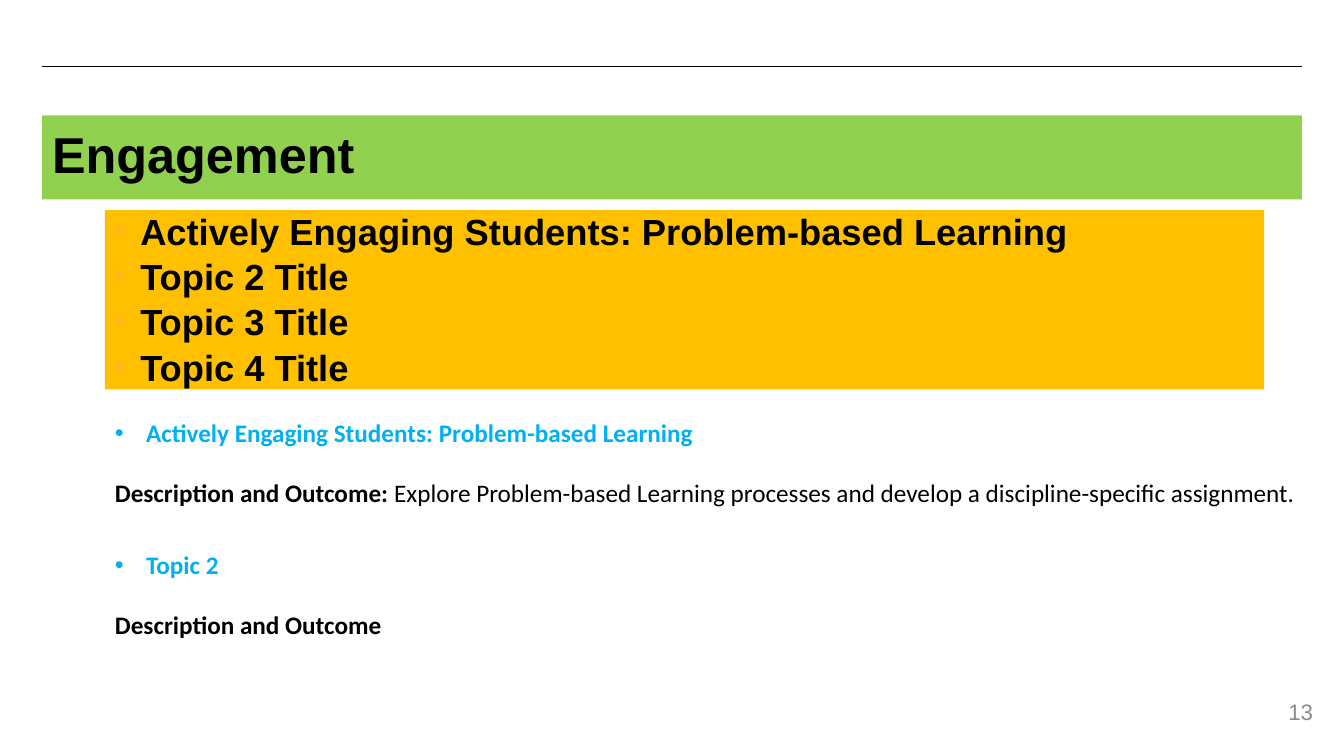
from lxml.etree import SubElement
from pptx import Presentation
from pptx.dml.color import RGBColor
from pptx.enum.shapes import MSO_CONNECTOR as Connector
from pptx.enum.text import MSO_ANCHOR as Anchor, MSO_AUTO_SIZE as AutoSize, PP_ALIGN as Align
from pptx.oxml.ns import qn
from pptx.util import Inches, Pt

COLUMNS, ROWS = 64, 36
BLACK, BLUE, GREEN, AMBER, GOLD, GREY = "000000", "00B0F0", "92D050", "FFC000", "FFB819", "8C8C8C"
TOPICS = ["Actively Engaging Students: Problem-based Learning",
          "Topic 2 Title", "Topic 3 Title", "Topic 4 Title"]


def color(value):
    return RGBColor.from_string(value)


class SlideBuilder:
    """Holds the style and the slide; places are columns and rows of a 64 by 36 grid."""
    heading_font = "Arial"
    detail_font = "Calibri"
    detail_size = 18

    def __init__(self, deck):
        self.column = deck.slide_width / COLUMNS
        self.row = deck.slide_height / ROWS
        self.slide = deck.slides.add_slide(deck.slide_layouts[1])

    def grid(self, left, top, width, height):
        return (round(left * self.column), round(top * self.row),
                round(width * self.column), round(height * self.row))

    def style(self, span, font, size, hue, bold=False):
        span.font.name, span.font.size, span.font.bold = font, Pt(size), bold
        span.font.color.rgb = color(hue)

    def bullet(self, para, char, indent, hue=None, percent=100):
        properties = para._p.get_or_add_pPr()
        properties.set("marL", str(Inches(indent)))
        properties.set("indent", str(-Inches(indent)))
        if hue:
            SubElement(SubElement(properties, qn("a:buClr")), qn("a:srgbClr"), val=hue)
        SubElement(properties, qn("a:buSzPct"), val=str(percent * 1000))
        SubElement(properties, qn("a:buFont"), typeface="Arial")
        SubElement(properties, qn("a:buChar"), char=char)

    def rule(self, left, right, row):
        x, y, width, _ = self.grid(left, row, right - left, 0)
        line = self.slide.shapes.add_connector(Connector.STRAIGHT, x, y, x + width, y)
        line.line.color.rgb = color(BLACK)
        line.line.width = Pt(0.5)
        SubElement(line._element.spPr, qn("a:effectLst"))

    def placeholder(self, index, place, fill, lines):
        """Move and fill a template placeholder, and return its text frame."""
        box = self.slide.placeholders[index]
        box.left, box.top, box.width, box.height = self.grid(*place)
        box.fill.solid()
        box.fill.fore_color.rgb = color(fill)
        frame = box.text_frame
        frame.text = "\n".join(lines)
        frame.auto_size = AutoSize.NONE
        return frame

    def title(self, text, place):
        frame = self.placeholder(0, place, GREEN, [text])
        frame.vertical_anchor = Anchor.MIDDLE
        para = frame.paragraphs[0]
        para.alignment, para.line_spacing = Align.LEFT, 0.9
        self.style(para.runs[0], self.heading_font, 36, BLACK, True)

    def topics(self, lines, place):
        frame = self.placeholder(1, place, AMBER, lines)
        frame.margin_top = Inches(0.1)
        for number, para in enumerate(frame.paragraphs):
            para.line_spacing = 0.72
            para.space_before = Pt(10 if number else 0)
            self.bullet(para, "▶", 0.25, GOLD, 50)
            self.style(para.runs[0], self.heading_font, 25.9, BLACK, True)

    def text_box(self, place):
        frame = self.slide.shapes.add_textbox(*self.grid(*place)).text_frame
        frame.word_wrap = True
        return frame

    def detail(self, heading, label, description, place):
        frame = self.text_box(place)
        head = frame.paragraphs[0]
        head.text = heading
        self.bullet(head, "•", 0.31)
        self.style(head.runs[0], self.detail_font, self.detail_size, BLUE, True)
        para = frame.add_paragraph()
        para.space_before = Pt(21.5)
        for text, bold in ((label, True), (description, False)):
            if text:
                span = para.add_run()
                span.text = text
                self.style(span, self.detail_font, self.detail_size, BLACK, bold)

    def page_number(self, number, place):
        frame = self.text_box(place)
        frame.vertical_anchor = Anchor.BOTTOM
        para = frame.paragraphs[0]
        para.text = number
        para.alignment = Align.RIGHT
        self.style(para.runs[0], self.heading_font, 16, GREY)


def main():
    deck = Presentation()
    deck.slide_width, deck.slide_height = Inches(13.33), Inches(7.5)
    page = SlideBuilder(deck)
    page.rule(2, 62, 3.17)
    page.page_number("13", (60, 32.6, 3, 2.16))
    page.title("Engagement", (2, 5.5, 60, 4))
    page.topics(TOPICS, (5, 10, 55.2, 8.54))
    page.detail(TOPICS[0], "Description and Outcome: ",
                "Explore Problem-based Learning processes and develop a "
                "discipline-specific assignment.", (5, 19.63, 57.75, 6.29))
    page.detail("Topic 2", "Description and Outcome", "", (5, 25.92, 13.8, 4.85))
    deck.save("out.pptx")


if __name__ == "__main__":
    main()
